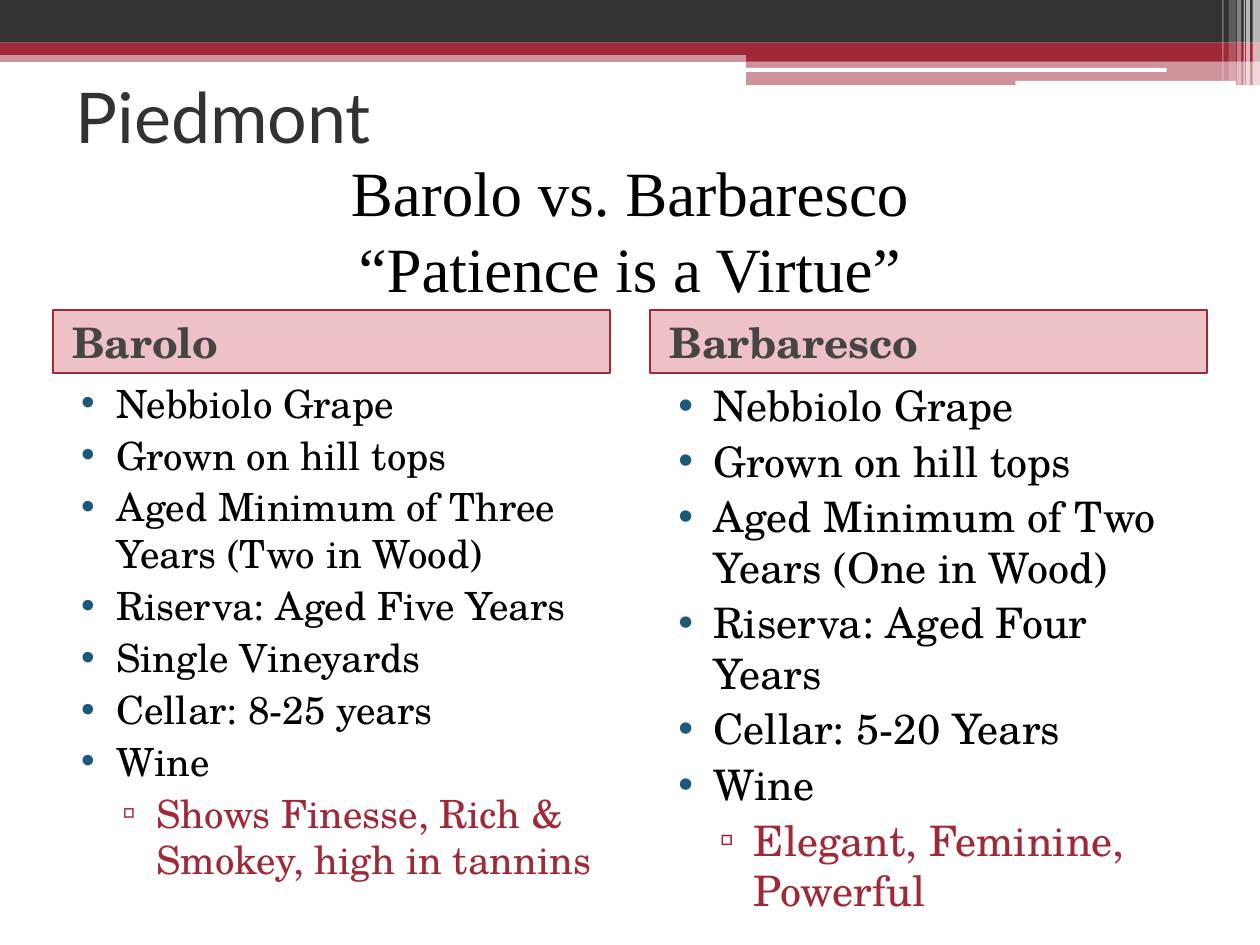
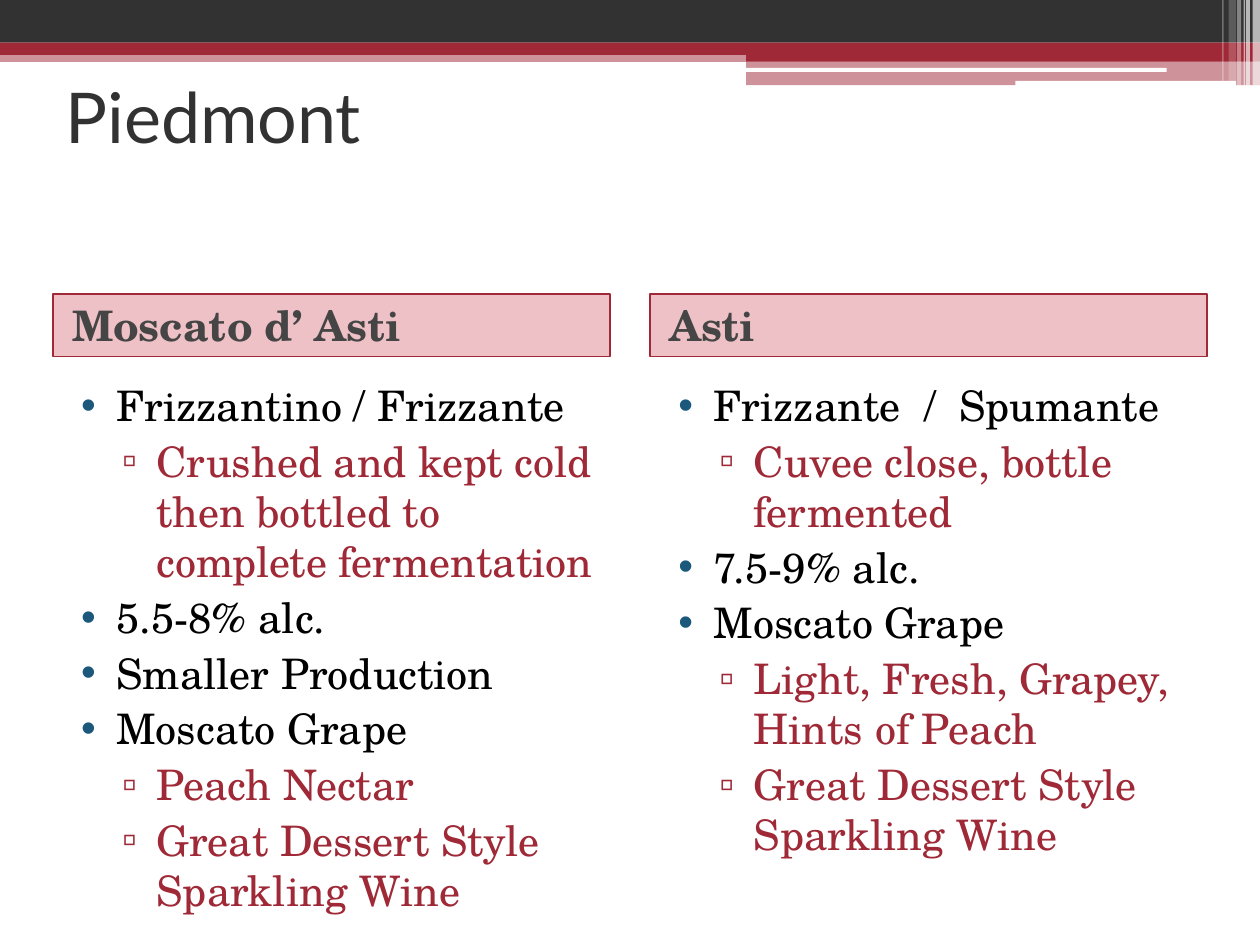
from lxml.etree import SubElement as Sub
from pptx import Presentation
from pptx.dml.color import RGBColor as Rgb
from pptx.enum.shapes import MSO_SHAPE as Kind
from pptx.enum.text import MSO_ANCHOR as Anchor, MSO_AUTO_SIZE as Fit, PP_ALIGN as Align
from pptx.oxml.ns import qn
from pptx.util import Cm, Pt

HUES = {"dark": "323232", "red": "9F2936", "white": "FFFFFF", "rose": "BC0B1F",
        "gray": "454545", "blue": "1B587C", "black": "000000"}
SANS, SERIF, ROMAN = "Lato", "TeX Gyre Schola", "Times New Roman"


def paint(shape, hue, alpha=100):
    """Solid fill with an opacity in percent."""
    shape.fill.solid()
    shape.fill.fore_color.rgb = Rgb.from_string(HUES[hue])
    if alpha < 100:
        clr = shape.fill._xPr.find(qn("a:solidFill"))[0]
        Sub(clr, qn("a:alpha"), val=str(alpha * 1000))


def write(par, text, font=SERIF, size=24, hue="black", bold=False, align=Align.LEFT,
          before=0, left=0, hang=0, mark=None, dot=None):
    """Fill one paragraph; mark is the bullet sign and dot its colour."""
    par.text = text
    par.alignment, par.space_before = align, Pt(before)
    for run in par.runs:
        face = run.font
        face.name, face.size, face.bold = font, Pt(size), bold
        face.color.rgb = Rgb.from_string(HUES[hue])
    props = par._p.get_or_add_pPr()
    props.set("marL", str(Cm(left)))
    props.set("indent", str(Cm(-hang)))
    if mark:
        Sub(Sub(props, qn("a:buClr")), qn("a:srgbClr"), val=HUES[dot])
        Sub(props, qn("a:buChar"), char=mark)


# Shared bands: kind, left, top, width, height, colour, opacity
BOX, ROUND = Kind.RECTANGLE, Kind.ROUNDED_RECTANGLE
BANDS = [
    (BOX, 0, 1.02, 25.4, 0.23, "red", 50),
    (BOX, 0, 0, 25.4, 0.86, "dark", 100),
    (BOX, 0, 0.86, 25.4, 0.25, "red", 100),
    (BOX, 15.04, 0.99, 10.36, 0.25, "red", 100),
    (BOX, 15.04, 1.24, 10.36, 0.48, "red", 50),
    (ROUND, 15.01, 1.37, 8.51, 0.08, "white", 100),
    (ROUND, 20.47, 1.63, 4.45, 0.1, "white", 100),
]
# Pale stripes at the right edge: left, width, height, opacity
STRIPES = [(25.25, 0.15, 1.73, 65), (25.12, 0.08, 1.73, 65), (25.07, 0.03, 1.73, 60),
           (24.94, 0.08, 1.73, 40), (24.77, 0.15, 1.63, 20), (24.64, 0.03, 1.63, 30)]
BANDS += [(BOX, x, 0, w, h, "white", alpha) for x, w, h, alpha in STRIPES]

# Columns, and the bullet style of each level
COLS, WIDE = (1.07, 13.11), 11.23
LEVELS = [dict(hue="black", left=1.02, hang=0.71, mark="•", dot="blue"),
          dict(hue="red", left=1.83, hang=0.69, mark="▫", dot="red")]

# Slides: title left, heading top, then heading, text size and list of each column
PAGES = [
    dict(left=1.27, top=6.25, cols=[
        ("Barolo", 22.2, [
            (0, "Nebbiolo Grape"),
            (0, "Grown on hill tops"),
            (0, "Aged Minimum of Three Years (Two in Wood)"),
            (0, "Riserva: Aged Five Years"),
            (0, "Single Vineyards"),
            (0, "Cellar: 8-25 years"),
            (0, "Wine"),
            (1, "Shows Finesse, Rich & Smokey, high in tannins")]),
        ("Barbaresco", 24, [
            (0, "Nebbiolo Grape"),
            (0, "Grown on hill tops"),
            (0, "Aged Minimum of Two Years (One in Wood)"),
            (0, "Riserva: Aged Four Years"),
            (0, "Cellar: 5-20 Years"),
            (0, "Wine"),
            (1, "Elegant, Feminine, Powerful")])]),
    dict(left=1.07, top=5.92, cols=[
        ("Moscato d’ Asti", 24, [
            (0, "Frizzantino / Frizzante"),
            (1, "Crushed and kept cold then bottled to complete fermentation"),
            (0, "5.5-8% alc."),
            (0, "Smaller Production"),
            (0, "Moscato Grape"),
            (1, "Peach Nectar"),
            (1, "Great Dessert Style Sparkling Wine")]),
        ("Asti", 24, [
            (0, "Frizzante  /  Spumante"),
            (1, "Cuvee close, bottle fermented"),
            (0, "7.5-9% alc."),
            (0, "Moscato Grape"),
            (1, "Light, Fresh, Grapey, Hints of Peach"),
            (1, "Great Dessert Style Sparkling Wine")])]),
]

deck = Presentation()
deck.slide_width, deck.slide_height = Cm(25.4), Cm(19.05)

for page in PAGES:
    slide = deck.slides.add_slide(deck.slide_layouts[4])
    title, *holds = slide.placeholders

    # Title
    title.left, title.top, title.width, title.height = Cm(page["left"]), Cm(0.84), Cm(23.29), Cm(2.97)
    title.text_frame.vertical_anchor = Anchor.MIDDLE
    title.text_frame.auto_size = Fit.NONE
    write(title.text_frame.paragraphs[0], "Piedmont", font=SANS, size=40, hue="dark")

    for x, (name, size, items), head, body in zip(COLS, page["cols"], holds[::2], holds[1::2]):
        # Column heading
        head.left, head.top, head.width, head.height = Cm(x), Cm(page["top"]), Cm(WIDE), Cm(1.27)
        paint(head, "rose", 25)
        head.line.color.rgb, head.line.width = Rgb.from_string(HUES["red"]), Pt(1)
        head.text_frame.vertical_anchor = Anchor.MIDDLE
        head.text_frame.auto_size = Fit.NONE
        write(head.text_frame.paragraphs[0], name, hue="gray", bold=True, before=3, left=0.13)

        # Column list
        body.left, body.top, body.width, body.height = Cm(x), Cm(7.52), Cm(WIDE), Cm(10.8)
        frame = body.text_frame
        frame.auto_size = Fit.NONE
        for n, (level, text) in enumerate(items):
            par = frame.add_paragraph() if n else frame.paragraphs[0]
            par.level = level
            write(par, text, size=size, before=3, **LEVELS[level])

# Subtitle of the first slide
first = deck.slides[0]
sub = first.shapes.add_textbox(0, Cm(2.97), Cm(25.4), Cm(3.33)).text_frame
sub.word_wrap = True
write(sub.paragraphs[0], "Barolo vs. Barbaresco\n“Patience is a Virtue”",
      font=ROMAN, size=36, align=Align.CENTER)

# Bands are drawn once, then moved behind everything on the slide master
bands = []
for kind, x, y, w, h, hue, alpha in BANDS:
    band = first.shapes.add_shape(kind, Cm(x), Cm(y), Cm(w), Cm(h))
    band.shadow.inherit = False
    band.line.fill.background()
    paint(band, hue, alpha)
    bands.append(band)
tree = deck.slide_master.shapes.element
for n, band in enumerate(bands):
    tree.insert(2 + n, band.element)

deck.save("out.pptx")
